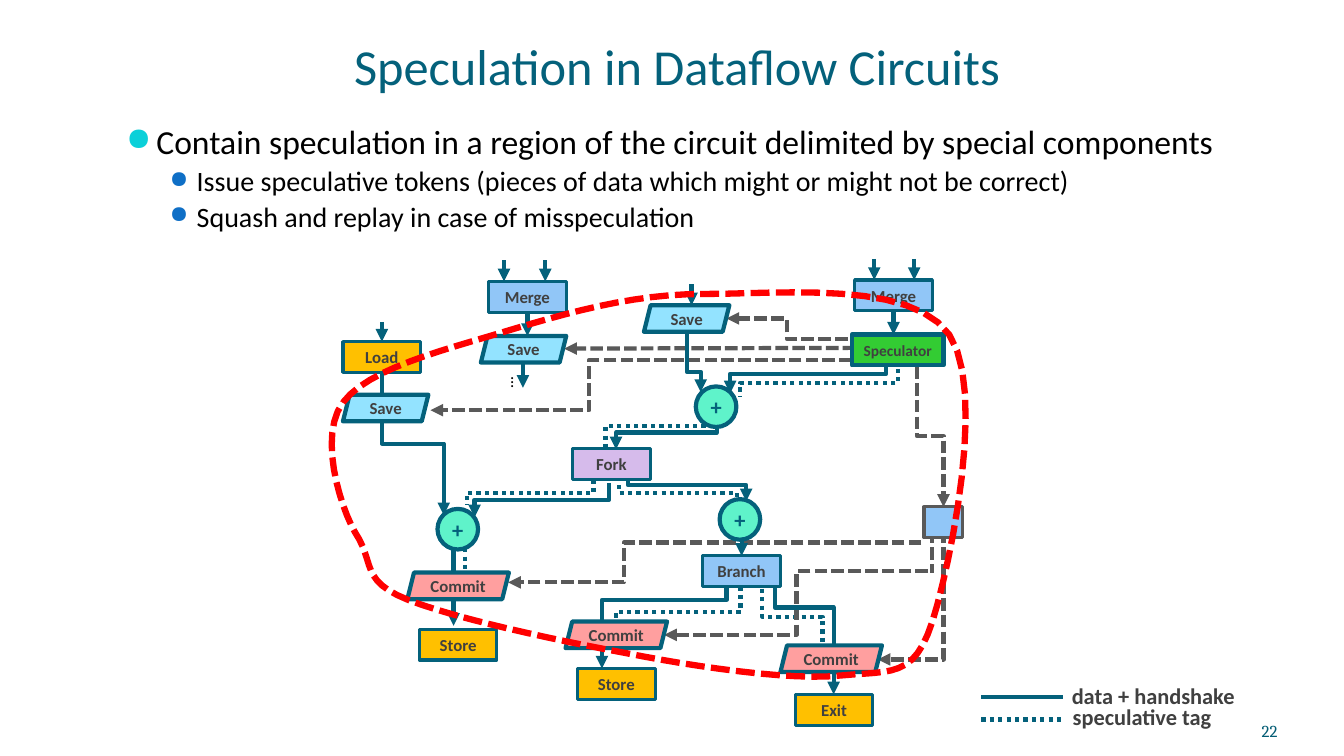
from lxml.etree import SubElement
from pptx import Presentation
from pptx.dml.color import RGBColor
from pptx.enum.dml import MSO_LINE as DASH
from pptx.enum.shapes import MSO_CONNECTOR as LINK, MSO_SHAPE as SHAPE
from pptx.enum.text import MSO_ANCHOR as ANCHOR, PP_ALIGN as ALIGN
from pptx.oxml.ns import qn
from pptx.util import Pt

COLORS = {
    "teal": "04617B", "grey": "595959", "label": "404040", "black": "000000",
    "blue": "91C6F7", "amber": "FFC000", "rose": "FF9F9F", "sky": "93E3FF",
    "green": "33CC33", "violet": "D6BBEB", "mint": "5FF3CA", "red": "FF0000",
    "page": "045D75", "bullet": "0BD0D9", "sub_bullet": "0F6FC6",
}
BLOCK, COMMIT, SAVE, ADDER = (55.5, 22), (72.5, 19), (61, 19), (29, 29)

# Each wire: start, end, and the coordinate of its middle segment
DATA_WIRES = [
    ((273, 265.5), (317, 368), 317), ((435, 345), (339, 369.5), 357),
    ((553.5, 410.5), (595.5, 496), 434), ((519, 419), (430, 477.5), 428.5),
    ((633, 259), (521.5, 281), 267), ((448.5, 339), (533, 358), 346.5),
    ((490.5, 237.5), (500.5, 280), 265.5), ((512, 299.5), (440, 321), 309),
]
TAG_WIRES = [
    ((544.5, 420.5), (587.5, 478), 440.5), ((641.5, 263.5), (528.5, 283.5), 273.5),
    ((424, 342.5), (333.5, 361), 352), ((529, 419), (440, 462), 437),
    ((442, 346.5), (526.5, 362), 352), ((504.5, 299), (432.5, 319), 304.5),
]
CONTROL_WIRES = [
    ((663, 408), (474.5, 453.5), 569), ((658, 387.5), (363, 416), 445.5),
    ((605.5, 242), (519, 227.5), 562), ((608.5, 257), (307.5, 293), 421),
]
REGION_START = (245, 287.5)
REGION_CURVES = [
    ((263, 263.5), (315.5, 250.5), (358.5, 237.5)), ((402, 224.5), (451.5, 209.5), (504.5, 210)),
    ((558, 210), (651, 200), (678, 239)), ((705, 278), (679, 403), (666, 444)),
    ((653, 484.5), (637, 479), (601, 482.5)), ((564.5, 486.5), (494.5, 476), (447, 466.5)),
    ((395.5, 457), (326, 442), (291.5, 428.5)), ((256.5, 414.5), (268.5, 402.5), (253.5, 380)),
    ((242.5, 360.5), (227.5, 311), REGION_START),
]


def rgb(name):
    return RGBColor.from_string(COLORS[name])


def stroke(line, color, width, dash=None):
    line.color.rgb = rgb(color)
    line.width = Pt(width)
    line.dash_style = dash


def write(paragraph, text, size=12, color="label", bold=False, align=ALIGN.CENTER, font="Calibri"):
    paragraph.alignment = align
    run = paragraph.add_run()
    run.text = text
    run.font.name, run.font.size, run.font.bold = font, Pt(size), bold
    run.font.color.rgb = rgb(color)


def set_frame(frame, anchor, inset):
    frame.word_wrap, frame.vertical_anchor = True, anchor
    frame.margin_left = frame.margin_right = Pt(inset[0])
    frame.margin_top = frame.margin_bottom = Pt(inset[1])


def text_box(slide, x, y, w, h, text="", anchor=ANCHOR.TOP, inset=(7.2, 3.6), **style):
    box = slide.shapes.add_textbox(Pt(x), Pt(y), Pt(w), Pt(h))
    set_frame(box.text_frame, anchor, inset)
    if text:
        write(box.text_frame.paragraphs[0], text, **style)
    return box


def bullet_item(paragraph, text, size, color, percent, left, hang, align):
    write(paragraph, text, size=size, color="black", align=align)
    paragraph.space_before = Pt(size * 0.2)
    props = paragraph._p.get_or_add_pPr()
    props.set("marL", str(Pt(left)))
    props.set("indent", str(Pt(-hang)))
    SubElement(SubElement(props, qn("a:buClr")), qn("a:srgbClr"), val=COLORS[color])
    SubElement(props, qn("a:buSzPct"), val=str(percent * 1000))
    SubElement(props, qn("a:buChar"), char="●")


def node(slide, kind, x, y, extent, fill, text="", line="teal", width=2.25, **style):
    shape = slide.shapes.add_shape(kind, Pt(x), Pt(y), Pt(extent[0]), Pt(extent[1]))
    shape.shadow.inherit = False
    shape.fill.solid()
    shape.fill.fore_color.rgb = rgb(fill)
    stroke(shape.line, line, width)
    set_frame(shape.text_frame, ANCHOR.MIDDLE, (0, 0))
    if text:
        write(shape.text_frame.paragraphs[0], text, bold=True, **style)
    return shape


def wire(slide, start, end, kind=LINK.STRAIGHT, color="teal", dash=None, arrow=True):
    link = slide.shapes.add_connector(kind, *(Pt(v) for v in (*start, *end)))
    stroke(link.line, color, 3, dash)
    props = link.element.spPr
    if arrow:
        SubElement(props.find(qn("a:ln")), qn("a:tailEnd"), type="triangle")
    SubElement(props, qn("a:effectLst"))
    return link


def elbow(slide, start, end, bend=None, down=True, **style):
    """Bent wire that leaves downwards or sideways; without bend it has a single corner."""
    (x1, y1), (x2, y2) = start, end
    if down:  # lay the wire on its side about its centre, then turn it
        cx, cy, dx, dy = (x1 + x2) / 2, (y1 + y2) / 2, (y2 - y1) / 2, (x1 - x2) / 2
        start, end = (cx - dx, cy - dy), (cx + dx, cy + dy)
    props = wire(slide, start, end, LINK.ELBOW, **style).element.spPr
    if down:
        props.find(qn("a:xfrm")).set("rot", str(90 * 60000))
    geometry = props.find(qn("a:prstGeom"))
    if bend is None:
        geometry.set("prst", "bentConnector2")
        return
    first, last = (y1, y2) if down else (x1, x2)
    share = round((bend - first) / (last - first) * 100000)
    SubElement(geometry.find(qn("a:avLst")), qn("a:gd"), name="adj1", fmla=f"val {share}")


def region(slide, steps=12):
    """Dashed closed outline through cubic curves."""
    points, p0 = [], REGION_START
    for p1, p2, p3 in REGION_CURVES:
        for t in (i / steps for i in range(1, steps + 1)):
            u = 1 - t
            points.append([Pt(u**3 * a + 3 * u * u * t * b + 3 * u * t * t * c + t**3 * d)
                           for a, b, c, d in zip(p0, p1, p2, p3)])
        p0 = p3
    builder = slide.shapes.build_freeform(*(Pt(v) for v in REGION_START), scale=1.0)
    builder.add_line_segments(points, close=True)
    outline = builder.convert_to_shape()
    outline.shadow.inherit = False
    outline.fill.background()
    stroke(outline.line, "red", 4.5, DASH.SQUARE_DOT)


def heading(slide):
    text_box(slide, 131, -18, 705.5, 90, "Speculation in Dataflow Circuits", anchor=ANCHOR.BOTTOM,
             inset=(0, 3.6), size=36, color="teal")
    body = text_box(slide, 83, 83, 793.5, 187).text_frame
    bullet_item(body.paragraphs[0],
                "Contain speculation in a region of the circuit delimited by special components",
                24, "bullet", 95, 21.6, 21.6, ALIGN.LEFT)
    for text in ("Issue speculative tokens (pieces of data which might or might not be correct)",
                 "Squash and replay in case of misspeculation"):
        item = body.add_paragraph()
        item.level, item.line_spacing = 1, 0.9
        bullet_item(item, text, 20, "sub_bullet", 85, 50.4, 19.4, ALIGN.JUSTIFY)
    text_box(slide, 832.5, 500.5, 80, 29, "22", anchor=ANCHOR.BOTTOM, inset=(0, 0),
             color="page", align=ALIGN.RIGHT, font="Cambria")


def wires(slide):
    control = {"color": "grey", "dash": DASH.SQUARE_DOT}
    tag = {"dash": DASH.ROUND_DOT, "arrow": False}
    for route in TAG_WIRES:
        elbow(slide, *route, **tag)
    for route in CONTROL_WIRES:
        elbow(slide, *route, down=False, **control)
    elbow(slide, (655, 261.5), (674, 362), 311.5, **control)
    elbow(slide, (674, 367), (627, 471), **control)
    wire(slide, (611, 248.5), (403, 249), **control)
    wire(slide, (665.5, 367), (665.5, 409.5), arrow=False, **control)
    wire(slide, (332, 379.5), (332, 422.5), **tag)
    for route in DATA_WIRES:
        elbow(slide, *route)
    for x, top, bottom in [(360, 186, 201), (389.5, 186, 201), (624.5, 185, 200), (653, 185, 200),
                           (494, 203, 218), (373.5, 260, 277), (324, 375, 447)]:
        wire(slide, (x, top), (x, bottom))


def components(slide):
    left_merge, right_merge, load, branch, *_ = [
        node(slide, SHAPE.RECTANGLE, x, y, BLOCK, fill, text) for text, x, y, fill in [
            ("Merge", 349, 201, "blue"), ("Merge", 610.5, 200, "blue"), ("Load", 245, 244, "amber"),
            ("Branch", 502, 397, "blue"), ("Fork", 409, 320.5, "violet"), ("Exit", 568, 496, "amber"),
            ("Store", 412.5, 477.5, "amber"), ("Store", 299.5, 449.5, "amber")]]
    node(slide, SHAPE.RECTANGLE, 608.5, 239, (65.5, 22), "green", "Speculator", width=3, size=11)
    node(slide, SHAPE.RECTANGLE, 660, 362, (27.5, 22), "blue", line="grey")
    for x, y in [(557.5, 461), (404, 444), (291, 409)]:
        node(slide, SHAPE.PARALLELOGRAM, x, y, COMMIT, "rose", "Commit", width=3)
    for x, y in [(343.5, 240), (245, 282), (460, 218)]:
        node(slide, SHAPE.PARALLELOGRAM, x, y, SAVE, "sky", "Save", width=3)
    for x, y in [(514, 356.5), (312.5, 363.5), (497, 276)]:
        node(slide, SHAPE.OVAL, x, y, ADDER, "mint", "+", width=3, size=16, color="teal")
    text_box(slide, 354, 267, 32, 21.5, "...", color="black", align=ALIGN.LEFT).rotation = 90
    wire(slide, (376.75, 223), (376.75, 240)).begin_connect(left_merge, 2)
    wire(slide, (638.25, 222), (638.25, 239)).begin_connect(right_merge, 2)
    wire(slide, (272.75, 230), (272.75, 244)).end_connect(load, 0)
    wire(slide, (529.75, 386), (529.75, 397)).end_connect(branch, 0)


def main():
    deck = Presentation()
    deck.slide_width, deck.slide_height = Pt(960), Pt(540)
    slide = deck.slides.add_slide(deck.slide_layouts[6])
    for draw in (heading, wires, components, region):
        draw(slide)
    for text, x, y, line_y, dash in [("data + handshake", 741, 484, 498, None),
                                     ("speculative tag", 733, 498.5, 514, DASH.ROUND_DOT)]:
        wire(slide, (701, line_y), (759, line_y), dash=dash, arrow=False)
        text_box(slide, x, y, 165.5, 26.5, text, size=16, bold=True)
    deck.save("out.pptx")


if __name__ == "__main__":
    main()
